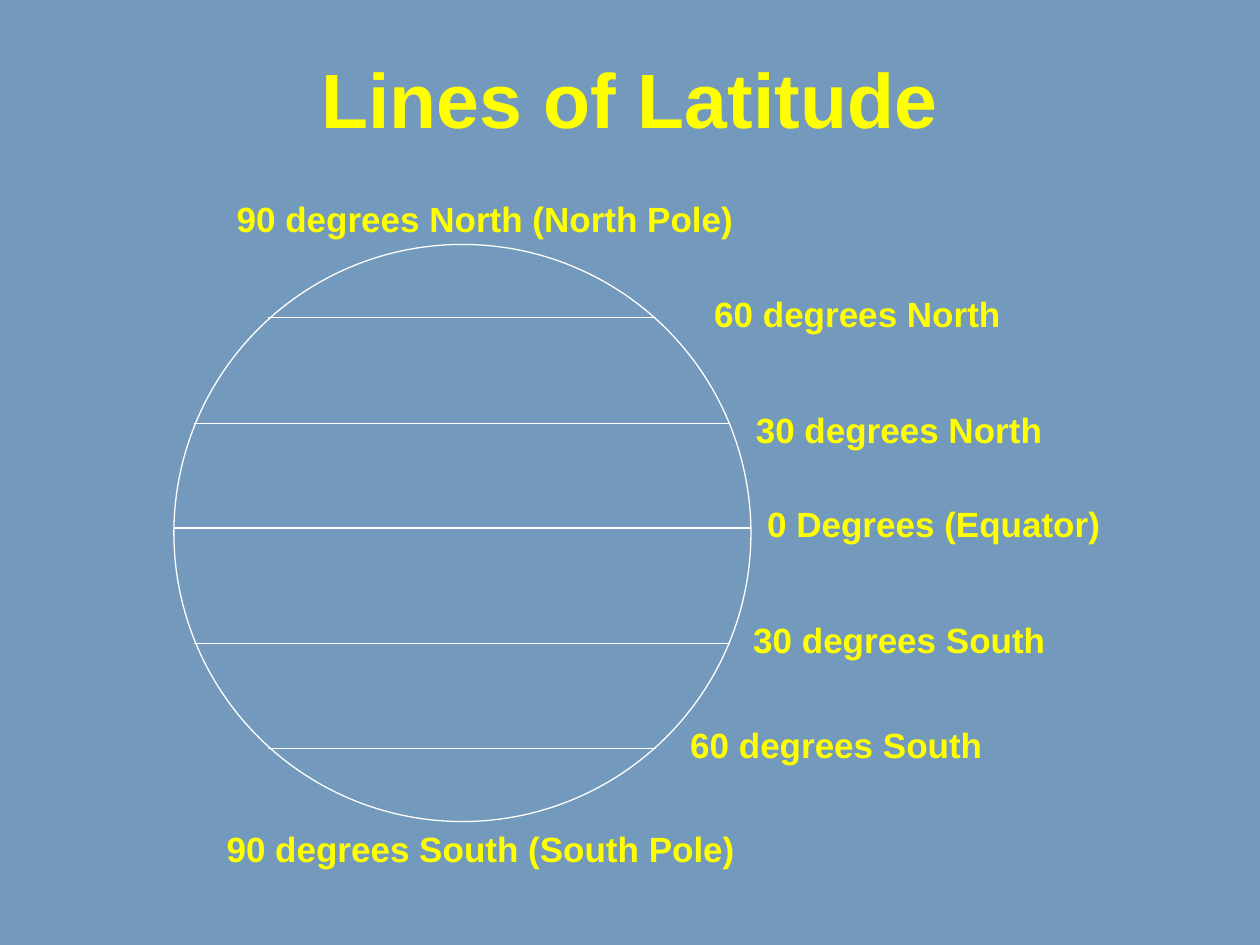
"""Build the Lines of Latitude slide."""
from lxml import etree
from pptx import Presentation
from pptx.dml.color import RGBColor
from pptx.enum import shapes, text
from pptx.oxml import ns
from pptx.util import Inches, Pt

BLUE = RGBColor(0x73, 0x9A, 0xBC)
YELLOW = RGBColor(0xFF, 0xFF, 0x00)
WHITE = RGBColor(0xFF, 0xFF, 0xFF)

GLOBE_LEFT, GLOBE_TOP, GLOBE_SIZE = 1.38, 1.94, 4.58
PARALLELS = [
    (1.38, 5.96, 4.19),
    (1.54, 5.79, 3.36),
    (2.13, 5.21, 2.52),
    (1.54, 5.79, 5.11),
    (2.13, 5.21, 5.94),
]
LABELS = [
    ("0 Degrees (Equator)", 5.99, 3.94, 2.87),
    ("30 degrees South", 5.88, 4.86, 2.54),
    ("60 degrees South", 5.38, 5.69, 2.54),
    ("30 degrees North", 5.9, 3.19, 2.49),
    ("60 degrees North", 5.57, 2.27, 2.49),
    ("90 degrees South (South Pole)", 1.7, 6.52, 4.27),
    ("90 degrees North (North Pole)", 1.78, 1.52, 4.17),
]


def set_values(target, values):
    """Set each named value on the target."""
    for name, value in values.items():
        setattr(target, name, value)


def write(box, words, size):
    """Write one bold yellow line that does not wrap."""
    frame = box.text_frame
    frame.text = words
    set_values(frame, {"word_wrap": False,
                       "auto_size": text.MSO_AUTO_SIZE.SHAPE_TO_FIT_TEXT})
    font = frame.paragraphs[0].runs[0].font
    set_values(font, {"name": "Arial", "size": Pt(size), "bold": True})
    font.color.rgb = YELLOW


def draw_outline(line):
    """Give a line the thin white stroke."""
    line.color.rgb = WHITE
    line.width = Pt(0.75)


def add_title(page):
    """Place and format the title placeholder."""
    title = page.shapes.title
    set_values(title, {"left": Inches(2.43), "top": Inches(0.44),
                       "width": Inches(5.14), "height": Inches(0.77)})
    write(title, "Lines of Latitude", 44)
    title.text_frame.vertical_anchor = text.MSO_ANCHOR.MIDDLE
    set_values(title.text_frame.paragraphs[0],
               {"alignment": text.PP_ALIGN.CENTER, "line_spacing": 0.9})


def add_globe(page):
    """Draw the unfilled circle of the globe."""
    globe = page.shapes.add_shape(
        shapes.MSO_SHAPE.OVAL, Inches(GLOBE_LEFT), Inches(GLOBE_TOP),
        Inches(GLOBE_SIZE), Inches(GLOBE_SIZE))
    globe.shadow.inherit = False
    globe.fill.background()
    draw_outline(globe.line)


def add_parallel(page, start, end, height):
    """Draw one horizontal line of latitude."""
    parallel = page.shapes.add_connector(
        shapes.MSO_CONNECTOR.STRAIGHT, Inches(start), Inches(height),
        Inches(end), Inches(height))
    draw_outline(parallel.line)
    etree.SubElement(parallel.element.spPr, ns.qn("a:effectLst"))


def add_label(page, words, left, top, width):
    """Add the name of one latitude."""
    box = page.shapes.add_textbox(
        Inches(left), Inches(top), Inches(width), Inches(0.44))
    write(box, words, 20)


def main():
    """Build and save the deck."""
    deck = Presentation()
    set_values(deck, {"slide_width": Inches(10), "slide_height": Inches(7.5)})
    page = deck.slides.add_slide(deck.slide_layouts[5])
    page.background.fill.solid()
    page.background.fill.fore_color.rgb = BLUE
    add_title(page)
    add_globe(page)
    for parallel in PARALLELS:
        add_parallel(page, *parallel)
    for label in LABELS:
        add_label(page, *label)
    deck.save("out.pptx")


if __name__ == "__main__":
    main()
